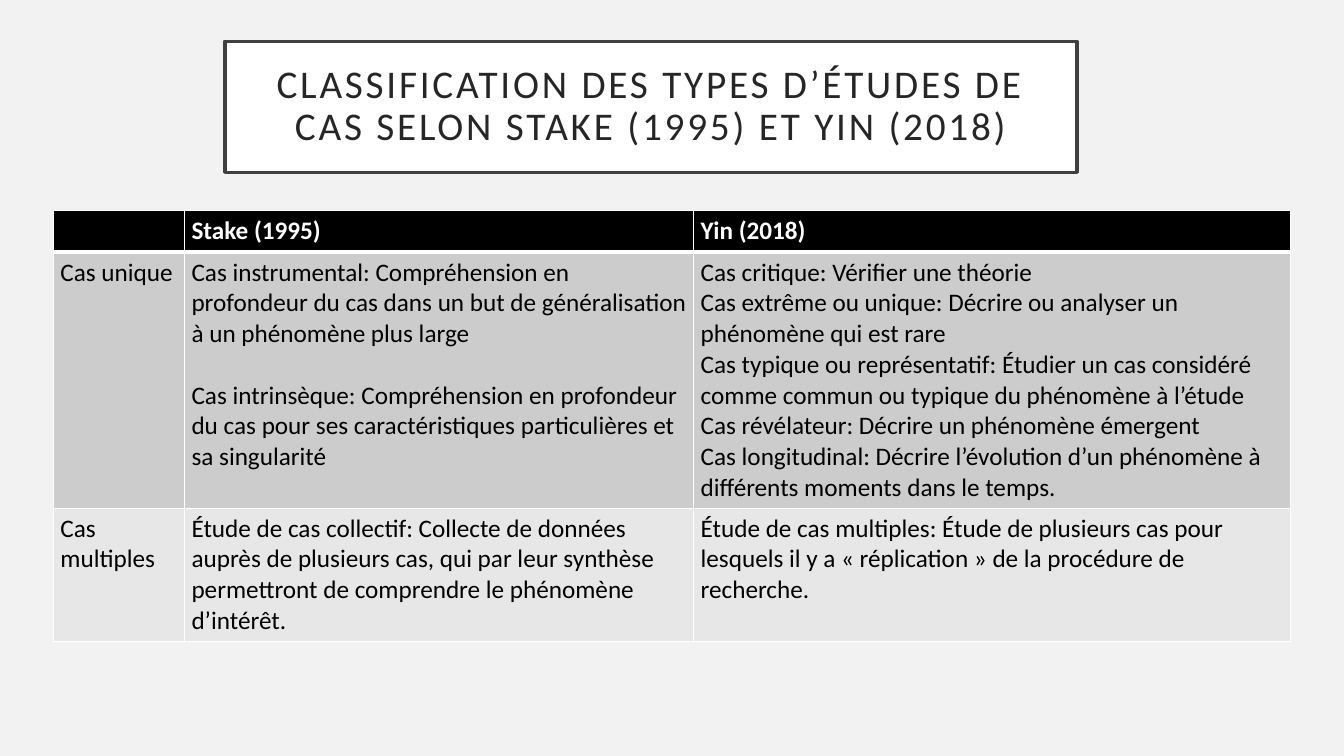
from lxml import etree
from pptx import Presentation
from pptx import util as u
from pptx.dml.color import RGBColor
from pptx.enum import text
from pptx.oxml import ns

WIDE, HIGH = 13.33, 7.5
FONT = "Calibri"
HUES = {"page": "F2F2F2", "white": "FFFFFF", "frame": "404040", "title": "262626",
        "black": "000000", "single": "CCCCCC", "multi": "E7E7E7"}

TITLE = "CLASSIFICATION DES TYPES D’ÉTUDES DE CAS SELON STAKE (1995) ET YIN (2018)"
COLS = [1.3, 5.05, 5.92]
ROWS = [0.41, 2.54, 1.32]
FILLS = ["black", "single", "multi"]
# Each cell is a list of paragraphs
CASES = [
    [[], ["Stake (1995)"], ["Yin (2018)"]],
    [["Cas unique"],
     ["Cas instrumental: Compréhension en profondeur du cas dans un but de "
      "généralisation à un phénomène plus large",
      "Cas intrinsèque: Compréhension en profondeur du cas pour ses "
      "caractéristiques particulières et sa singularité"],
     ["Cas critique: Vérifier une théorie",
      "Cas extrême ou unique: Décrire ou analyser un phénomène qui est rare",
      "Cas typique ou représentatif: Étudier un cas considéré comme commun ou "
      "typique du phénomène à l’étude",
      "Cas révélateur: Décrire un phénomène émergent",
      "Cas longitudinal: Décrire l’évolution d’un phénomène à différents "
      "moments dans le temps."]],
    [["Cas multiples"],
     ["Étude de cas collectif: Collecte de données auprès de plusieurs cas, qui "
      "par leur synthèse permettront de comprendre le phénomène d’intérêt."],
     ["Étude de cas multiples: Étude de plusieurs cas pour lesquels il y a "
      "« réplication » de la procédure de recherche."]],
]


def rgb(name):
    return RGBColor.from_string(HUES[name])


def paint(fill, name):
    fill.solid()
    fill.fore_color.rgb = rgb(name)


def style(item, **values):
    for key, value in values.items():
        setattr(item, key, value)


def write(par, words, size, hue, bold=False):
    run = par.add_run()
    run.text = words
    style(run.font, name=FONT, size=u.Pt(size), bold=bold)
    run.font.color.rgb = rgb(hue)
    return run


def edge(cell, head):
    """Rule all four sides in white, thicker under the header."""
    props = cell._tc.get_or_add_tcPr()
    for side in "LRTB":
        thick = 3 if head and side == "B" else 1
        line = etree.SubElement(props, ns.qn(f"a:ln{side}"), w=str(u.Pt(thick)))
        fill = etree.SubElement(line, ns.qn("a:solidFill"))
        etree.SubElement(fill, ns.qn("a:srgbClr"), val=HUES["white"])


def add_title(slide, left, top, width, height):
    box = slide.shapes.title
    style(box, left=u.Inches(left), top=u.Inches(top),
          width=u.Inches(width), height=u.Inches(height))
    paint(box.fill, "white")
    paint(box.line.fill, "frame")
    box.line.width = u.Pt(2.5)
    frame, pad = box.text_frame, u.Inches(0.2)
    style(frame, margin_left=pad, margin_right=pad, margin_top=pad,
          margin_bottom=pad, word_wrap=True, auto_size=text.MSO_AUTO_SIZE.NONE,
          vertical_anchor=text.MSO_ANCHOR.MIDDLE)
    par = frame.paragraphs[0]
    style(par, alignment=text.PP_ALIGN.CENTER, line_spacing=0.9)
    run = write(par, TITLE, 28, "title")
    run._r.get_or_add_rPr().set("spc", "200")  # letter spacing of 2 points


def fill_cell(cell, lines, row, col):
    head = row == 0
    edge(cell, head)
    paint(cell.fill, FILLS[row])
    style(cell, margin_left=u.Inches(0.07), margin_right=u.Inches(0.07),
          margin_top=u.Inches(0.05), margin_bottom=u.Inches(0.05))
    frame = cell.text_frame
    for i, words in enumerate(lines):
        par = frame.add_paragraph() if i else frame.paragraphs[0]
        if i and col == 1:
            par.space_before = u.Pt(22)  # one line between Stake's types
        write(par, words, 18, "white" if head else "black", head)


def add_cases(slide, left, top):
    box = (u.Inches(n) for n in (left, top, sum(COLS), sum(ROWS)))
    grid = slide.shapes.add_table(len(ROWS), len(COLS), *box).table
    for col, width in zip(grid.columns, COLS):
        col.width = u.Inches(width)
    for r, (row, height) in enumerate(zip(grid.rows, ROWS)):
        row.height = u.Inches(height)
        for c, lines in enumerate(CASES[r]):
            fill_cell(grid.cell(r, c), lines, r, c)


def main():
    deck = Presentation()
    style(deck, slide_width=u.Inches(WIDE), slide_height=u.Inches(HIGH))
    slide = deck.slides.add_slide(deck.slide_layouts[5])
    paint(slide.background.fill, "page")
    add_title(slide, 2.23, 0.41, 8.45, 1.3)
    add_cases(slide, (WIDE - sum(COLS)) / 2, 2.09)
    deck.save("out.pptx")


if __name__ == "__main__":
    main()
